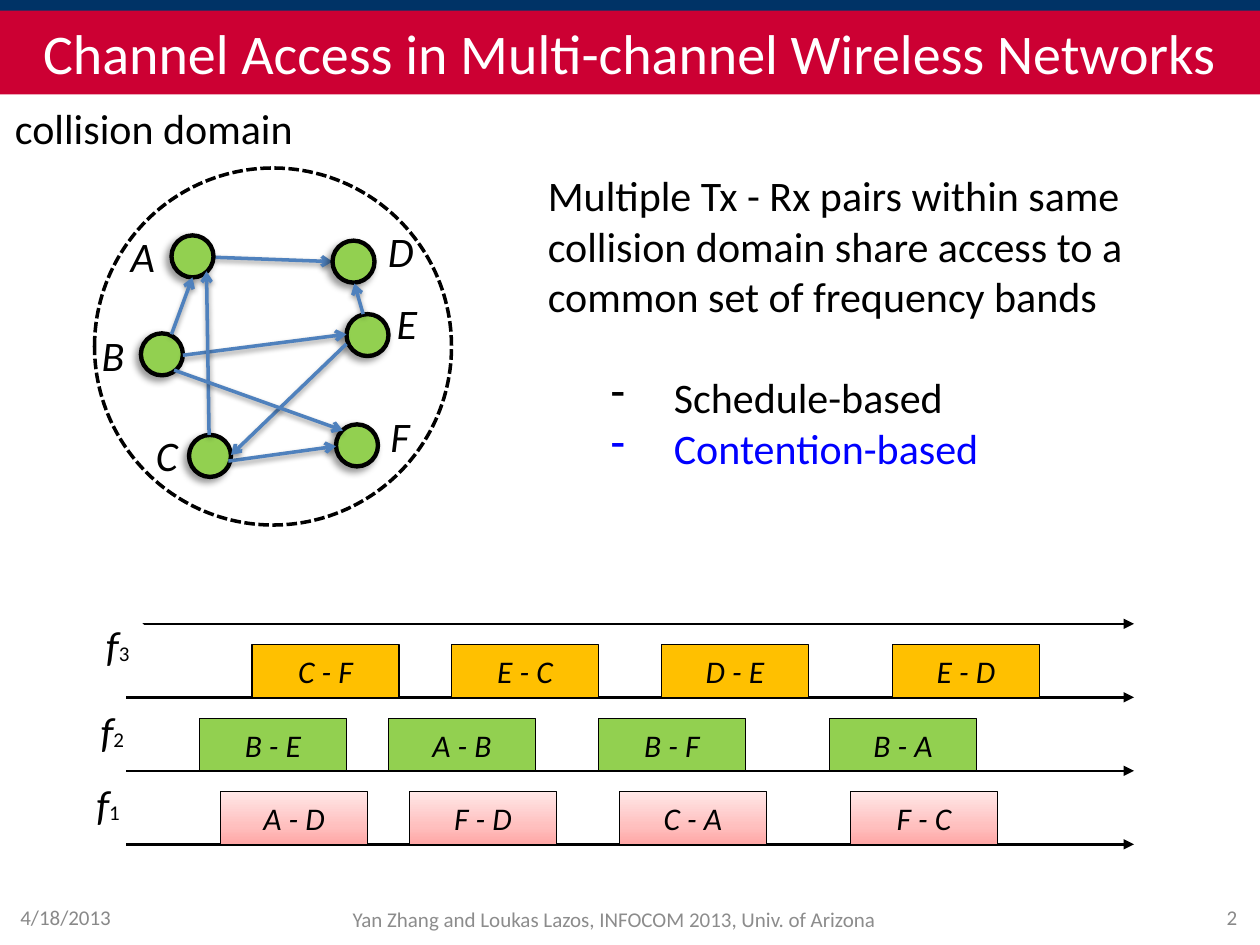
from copy import deepcopy
from dataclasses import dataclass

from lxml.etree import SubElement
from pptx import Presentation
from pptx.dml.color import RGBColor
from pptx.enum.dml import MSO_LINE
from pptx.enum.shapes import MSO_CONNECTOR, MSO_SHAPE
from pptx.enum.text import MSO_ANCHOR, PP_ALIGN
from pptx.oxml.ns import qn
from pptx.util import Pt


@dataclass(frozen=True)
class Theme:
    font: str = "Calibri"
    navy: str = "003366"
    red: str = "CC0033"
    white: str = "FFFFFF"
    black: str = "000000"
    arrow: str = "4F81BD"
    green: str = "92D050"
    amber: str = "FFC000"
    pink: tuple = ((0, "FFA6A5"), (0.35, "FFC0BF"), (1, "FFE7E7"))
    highlight: str = "0000FF"
    gray: str = "898989"
    footer_gray: str = "8C8C8C"
    title_size: int = 32
    body_size: int = 24
    block_size: int = 18
    small_size: int = 12


THEME = Theme()

NODES = {  # node left and top, label left and top
    "A": (98, 134.5, 67.5, 128),
    "D": (190, 137.5, 214.5, 125.5),
    "B": (80.5, 190.5, 51, 185),
    "E": (198, 179.5, 219.5, 166.5),
    "C": (108, 248.5, 82, 242),
    "F": (192, 242.5, 216, 231),
}
LINKS = [
    (104.5, 203, 198, 191),
    (130.5, 263.5, 192, 255),
    (198, 196.5, 132, 260),
    (98, 191, 110, 158.5),
    (119.5, 248.5, 118, 155),
    (99.5, 211.5, 196, 246),
    (207.5, 179.5, 202.5, 162),
]
BANDS = [  # band number, label left and top, fill, blocks
    ("3", 51, 355.5, THEME.amber,
     [(144, "C - F"), (258, "E - C"), (378, "D - E"), (510, "E - D")]),
    ("2", 48, 404.5, THEME.green,
     [(114, "B - E"), (222, "A - B"), (342, "B - F"), (474, "B - A")]),
    ("1", 45.5, 446.5, THEME.pink,
     [(126, "A - D"), (234, "F - D"), (354, "C - A"), (486, "F - C")]),
]
AXIS_TOP, AXIS_GAP = 356.5, 42
BLOCK_WIDTH, BLOCK_HEIGHT = 84, 30


def rgb(value):
    return RGBColor.from_string(value)


def add_run(paragraph, text, size, color=THEME.black, italic=False):
    run = paragraph.add_run()
    run.text = text
    run.font.name = THEME.font
    run.font.size = Pt(size)
    run.font.italic = italic
    run.font.color.rgb = rgb(color)


def fill_gradient(shape, stops):
    """Fill upwards, from the first stop at the bottom edge."""
    shape.fill.gradient()
    shape.fill.gradient_angle = 90
    stop_list = shape._element.spPr.find(qn("a:gradFill")).find(qn("a:gsLst"))
    stop_list.append(deepcopy(stop_list[0]))
    for stop, (position, color) in zip(shape.fill.gradient_stops, stops):
        stop.position = position
        stop.color.rgb = rgb(color)


def add_figure(slide, kind, box, fill=None, line=None, width=0.75):
    shape = slide.shapes.add_shape(kind, *map(Pt, box))
    shape.shadow.inherit = False
    if fill is None:
        shape.fill.background()
    elif isinstance(fill, tuple):
        fill_gradient(shape, fill)
    else:
        shape.fill.solid()
        shape.fill.fore_color.rgb = rgb(fill)
    if line is None:
        shape.line.fill.background()
    else:
        shape.line.color.rgb = rgb(line)
        shape.line.width = Pt(width)
    return shape


def center_text(shape, wrap=True):
    frame = shape.text_frame
    frame.word_wrap = wrap
    frame.vertical_anchor = MSO_ANCHOR.MIDDLE
    frame.paragraphs[0].alignment = PP_ALIGN.CENTER
    return frame.paragraphs[0]


def add_text(slide, box, text, size, color=THEME.black, italic=False,
             align=PP_ALIGN.LEFT, anchor=MSO_ANCHOR.TOP, wrap=True):
    frame = slide.shapes.add_textbox(*map(Pt, box)).text_frame
    frame.word_wrap = wrap
    frame.vertical_anchor = anchor
    frame.paragraphs[0].alignment = align
    add_run(frame.paragraphs[0], text, size, color, italic)
    return frame


def add_shadow(effects, alpha, blur, distance, angle):
    shadow = SubElement(effects, qn("a:outerShdw"), blurRad=str(Pt(blur)),
                        dist=str(Pt(distance)), dir=str(angle * 60000),
                        rotWithShape="0")
    color = SubElement(shadow, qn("a:srgbClr"), val=THEME.black)
    SubElement(color, qn("a:alpha"), val=str(alpha * 1000))


def add_arrow(slide, ends, color, width, head):
    """Draw an arrow and return its empty effect list."""
    arrow = slide.shapes.add_connector(MSO_CONNECTOR.STRAIGHT, *map(Pt, ends))
    arrow.line.color.rgb = rgb(color)
    arrow.line.width = Pt(width)
    properties = arrow._element.spPr
    SubElement(properties.find(qn("a:ln")), qn("a:tailEnd"), type=head)
    return SubElement(properties, qn("a:effectLst"))


def add_link(slide, ends):
    add_shadow(add_arrow(slide, ends, THEME.arrow, 2, "arrow"), 38, 3.1, 1.6, 90)


def add_node(slide, name, left, top, label_left, label_top):
    node = add_figure(slide, MSO_SHAPE.OVAL, (left, top, 24, 24),
                      THEME.green, THEME.black, 2.5)
    add_shadow(node._element.spPr.find(qn("a:effectLst")), 40, 4, 3, 135)
    add_text(slide, (label_left, label_top, 29, 36), name, THEME.body_size, italic=True)


def add_header(slide):
    add_figure(slide, MSO_SHAPE.RECTANGLE, (0, 0, 720, 6), THEME.navy, THEME.navy, 2)
    title = add_figure(slide, MSO_SHAPE.RECTANGLE, (0, 6, 720, 48), THEME.red)
    add_run(center_text(title), "Channel Access in Multi-channel Wireless Networks",
            THEME.title_size, THEME.white)


def add_collision_domain(slide):
    add_text(slide, (1.5, 55, 175, 36), "collision domain", THEME.body_size, wrap=False)
    add_link(slide, (121.5, 147, 190, 149.5))
    domain = add_figure(slide, MSO_SHAPE.OVAL, (54, 96, 204, 204),
                        line=THEME.black, width=2)
    domain.line.dash_style = MSO_LINE.SQUARE_DOT
    for name, places in NODES.items():
        add_node(slide, name, *places)
    for ends in LINKS:
        add_link(slide, ends)


def add_explanation(slide):
    frame = add_text(slide, (306, 93.5, 396.5, 201),
                     "Multiple Tx - Rx pairs within same collision domain "
                     "share access to a common set of frequency bands",
                     THEME.body_size)
    schemes = [("Schedule-based", THEME.black, 29), ("Contention-based", THEME.highlight, 0)]
    for scheme, color, gap in schemes:
        paragraph = frame.add_paragraph()
        paragraph.level = 1
        paragraph.space_before = Pt(gap)
        properties = paragraph._p.get_or_add_pPr()
        properties.set("marL", str(Pt(72)))
        properties.set("indent", str(Pt(-36)))
        SubElement(properties, qn("a:buFontTx"))
        SubElement(properties, qn("a:buChar"), char="-")
        add_run(paragraph, scheme, THEME.body_size, color)


def add_band_schedule(slide):
    for row in range(len(BANDS) + 1):
        y = AXIS_TOP + row * AXIS_GAP
        add_arrow(slide, (72, y, 648, y), THEME.black, 1.5, "triangle")
    for row, (number, label_left, label_top, fill, blocks) in enumerate(BANDS, 1):
        top = AXIS_TOP + row * AXIS_GAP - BLOCK_HEIGHT
        for left, pair in blocks:
            block = add_figure(slide, MSO_SHAPE.RECTANGLE,
                               (left, top, BLOCK_WIDTH, BLOCK_HEIGHT), fill, THEME.black)
            add_run(center_text(block, wrap=False), pair, THEME.block_size, italic=True)
        label = add_figure(slide, MSO_SHAPE.ROUNDED_RECTANGLE,
                           (label_left, label_top, 32.5, 26), THEME.white)
        band_name = center_text(label)
        add_run(band_name, "f", THEME.body_size, italic=True)
        add_run(band_name, number, THEME.small_size)


def add_footer(slide):
    footers = [
        ((4.5, 510, 168, 28.5), "4/18/2013", THEME.gray, PP_ALIGN.LEFT),
        ((192, 510, 318, 30), "Yan Zhang and Loukas Lazos, INFOCOM 2013, Univ. of Arizona",
         THEME.footer_gray, PP_ALIGN.CENTER),
        ((546, 510, 168, 28.5), "2", THEME.gray, PP_ALIGN.RIGHT),
    ]
    for box, text, color, align in footers:
        add_text(slide, box, text, THEME.small_size, color,
                 align=align, anchor=MSO_ANCHOR.MIDDLE)


def main():
    deck = Presentation()
    deck.slide_width, deck.slide_height = Pt(720), Pt(540)
    slide = deck.slides.add_slide(deck.slide_layouts[6])
    add_header(slide)
    add_collision_domain(slide)
    add_explanation(slide)
    add_band_schedule(slide)
    add_footer(slide)
    deck.save("out.pptx")


if __name__ == "__main__":
    main()
